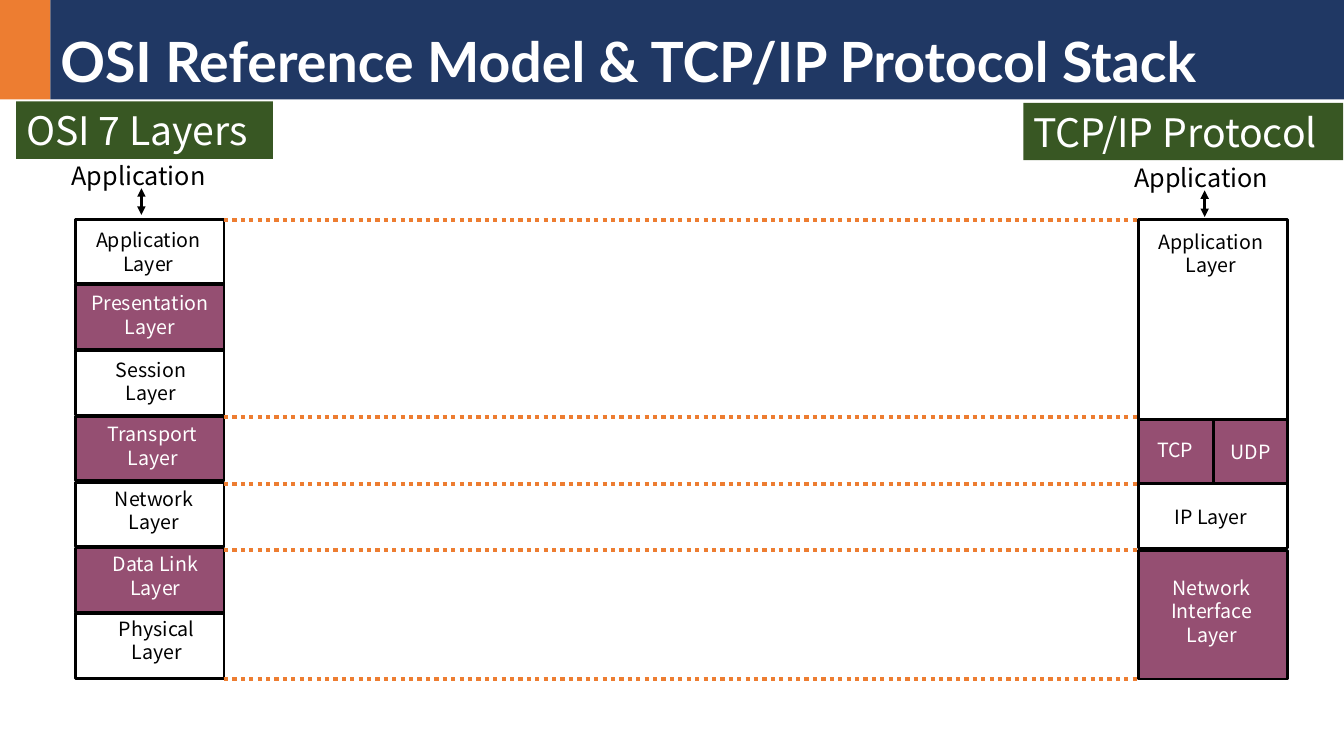
from dataclasses import dataclass

import pptx
import pptx.dml.color
import pptx.enum.dml
import pptx.enum.shapes
import pptx.enum.text
import pptx.oxml.ns
import pptx.shapes.autoshape
import pptx.shapes.connector
import pptx.util
from lxml import etree

Pt = pptx.util.Pt
RGBColor = pptx.dml.color.RGBColor
Align = pptx.enum.text.PP_ALIGN
Anchor = pptx.enum.text.MSO_ANCHOR
RECTANGLE = pptx.enum.shapes.MSO_SHAPE.RECTANGLE
STRAIGHT = pptx.enum.shapes.MSO_CONNECTOR.STRAIGHT

WHITE = RGBColor(0xFF, 0xFF, 0xFF)
BLACK = RGBColor(0x00, 0x00, 0x00)
ORANGE = RGBColor(0xED, 0x7D, 0x31)
NAVY = RGBColor(0x20, 0x38, 0x64)
GREEN = RGBColor(0x38, 0x57, 0x23)
PURPLE = RGBColor(0x95, 0x4F, 0x72)

BODY_FONT = "Noto Sans CJK KR"
STACK_WIDTH = 106
OSI_LEFT, OSI_TOP, OSI_PITCH, OSI_HEIGHT = 54, 156.5, 47, 46
TCPIP_LEFT = 813.5


@dataclass
class Layer:
    left: float
    top: float
    height: float
    purple: bool


@dataclass
class Label:
    text: str
    center: float
    top: float
    width: float
    height: float
    color: RGBColor


@dataclass
class Stack:
    heading: str
    heading_left: float
    heading_top: float
    heading_width: float
    application_left: float
    application_top: float
    arrow_x: float


OSI_LABELS = [
    ("Application\nLayer", 159.5, 92),
    ("Presentation\nLayer", 204.5, 104),
    ("Session\nLayer", 252, 67),
    ("Transport\nLayer", 298, 81),
    ("Network\nLayer", 344, 73),
    ("Data Link\nLayer", 391, 78),
    ("Physical\nLayer", 437, 71),
]
TCPIP_LAYERS = [
    Layer(TCPIP_LEFT, 157, 143, False),
    Layer(TCPIP_LEFT, 299.5, 46, True),
    Layer(TCPIP_LEFT, 345.5, 46, False),
    Layer(TCPIP_LEFT, 393, 92, True),
]
TCPIP_LABELS = [
    Label("Application\nLayer", 865, 160.5, 92, 41, BLACK),
    Label("TCP", 839.5, 309.5, 50, 24, WHITE),
    Label("UDP", 893.5, 310.5, 50, 24, WHITE),
    Label("IP Layer", 865, 357, 76, 24, BLACK),
    Label("Network\nInterface\nLayer", 865.5, 407.5, 120, 58, WHITE),
]
STACKS = [
    Stack("OSI 7 Layers", 11.5, 72.5, 183.5, 44, 111, 101),
    Stack("TCP/IP Protocol", 731, 73.5, 228.5, 803, 112.5, 860.5),
]
BOUNDARIES = [157, 298, 345.5, 393, 485]

deck = pptx.Presentation()
deck.slide_width, deck.slide_height = Pt(960), Pt(540)
slide = deck.slides.add_slide(deck.slide_layouts[6])


def add_box(left: float, top: float, width: float, height: float,
            fill: RGBColor | None = None,
            outline: RGBColor | None = None) -> pptx.shapes.autoshape.Shape:
    box = slide.shapes.add_shape(RECTANGLE, Pt(left), Pt(top), Pt(width), Pt(height))
    box.shadow.inherit = False
    if fill is None:
        box.fill.background()
    else:
        box.fill.solid()
        box.fill.fore_color.rgb = fill
    if outline is None:
        box.line.fill.background()
    else:
        box.line.color.rgb = outline
        box.line.width = Pt(2)
    return box


def write(box: pptx.shapes.autoshape.Shape, text: str, size: float, color: RGBColor,
          align: Align = Align.LEFT, anchor: Anchor = Anchor.TOP,
          font: str = BODY_FONT, bold: bool = False) -> None:
    frame = box.text_frame
    frame.word_wrap = False
    frame.vertical_anchor = anchor
    frame.text = text
    for paragraph in frame.paragraphs:
        paragraph.alignment = align
        paragraph.font.name = font
        paragraph.font.size = Pt(size)
        paragraph.font.bold = bold
        paragraph.font.color.rgb = color


def add_label(label: Label) -> None:
    box = slide.shapes.add_textbox(Pt(label.center - label.width / 2), Pt(label.top),
                                   Pt(label.width), Pt(label.height))
    write(box, label.text, 14, label.color, Align.CENTER)


def add_layer(layer: Layer) -> pptx.shapes.autoshape.Shape:
    return add_box(layer.left, layer.top, STACK_WIDTH, layer.height,
                   PURPLE if layer.purple else None, BLACK)


def add_line(x1: float, y1: float, x2: float, y2: float, color: RGBColor,
             width: float) -> pptx.shapes.connector.Connector:
    line = slide.shapes.add_connector(STRAIGHT, Pt(x1), Pt(y1), Pt(x2), Pt(y2))
    line.line.color.rgb = color
    line.line.width = Pt(width)
    etree.SubElement(line.element.spPr, pptx.oxml.ns.qn("a:effectLst"))
    return line


def add_stack_header(stack: Stack) -> None:
    heading = add_box(stack.heading_left, stack.heading_top, stack.heading_width, 41, GREEN)
    write(heading, stack.heading, 28, WHITE)
    application = slide.shapes.add_textbox(Pt(stack.application_left),
                                           Pt(stack.application_top), Pt(114.5), Pt(29))
    write(application, "Application", 18, BLACK)
    arrow_top = stack.application_top + 23.5
    arrow = add_line(stack.arrow_x, arrow_top, stack.arrow_x, arrow_top + 19, BLACK, 2)
    for end in ("a:headEnd", "a:tailEnd"):
        etree.SubElement(arrow.line._get_or_add_ln(), pptx.oxml.ns.qn(end), type="triangle")


# Title bar
add_box(0, 0, 36, 71, ORANGE)
title = add_box(36, 0, 924, 71, NAVY)
write(title, "OSI Reference Model & TCP/IP Protocol Stack", 39.6, WHITE,
      anchor=Anchor.BOTTOM, font="Lato", bold=True)
title.text_frame.paragraphs[0].line_spacing = 0.9

# OSI stack: every second layer is purple, labels step right by one point
for index, (text, top, width) in enumerate(OSI_LABELS):
    purple = index % 2 == 1
    add_layer(Layer(OSI_LEFT, OSI_TOP + index * OSI_PITCH, OSI_HEIGHT, purple))
    add_label(Label(text, 106 + index, top, width, 41, WHITE if purple else BLACK))

# TCP/IP stack, with the transport layer split in two
tcpip_boxes = [add_layer(layer) for layer in TCPIP_LAYERS]
for label in TCPIP_LABELS:
    add_label(label)
transport = tcpip_boxes[1]
divider = add_line(866.5, 299.5, 866.5, 345.5, BLACK, 2.25)
divider.begin_connect(transport, 0)
divider.end_connect(transport, 2)

# Dotted lines between matching layers
for y in BOUNDARIES:
    boundary = add_line(OSI_LEFT + STACK_WIDTH, y, TCPIP_LEFT, y, ORANGE, 3)
    boundary.line.dash_style = pptx.enum.dml.MSO_LINE.ROUND_DOT

# Headings and application arrows
for stack in STACKS:
    add_stack_header(stack)

deck.save("out.pptx")
